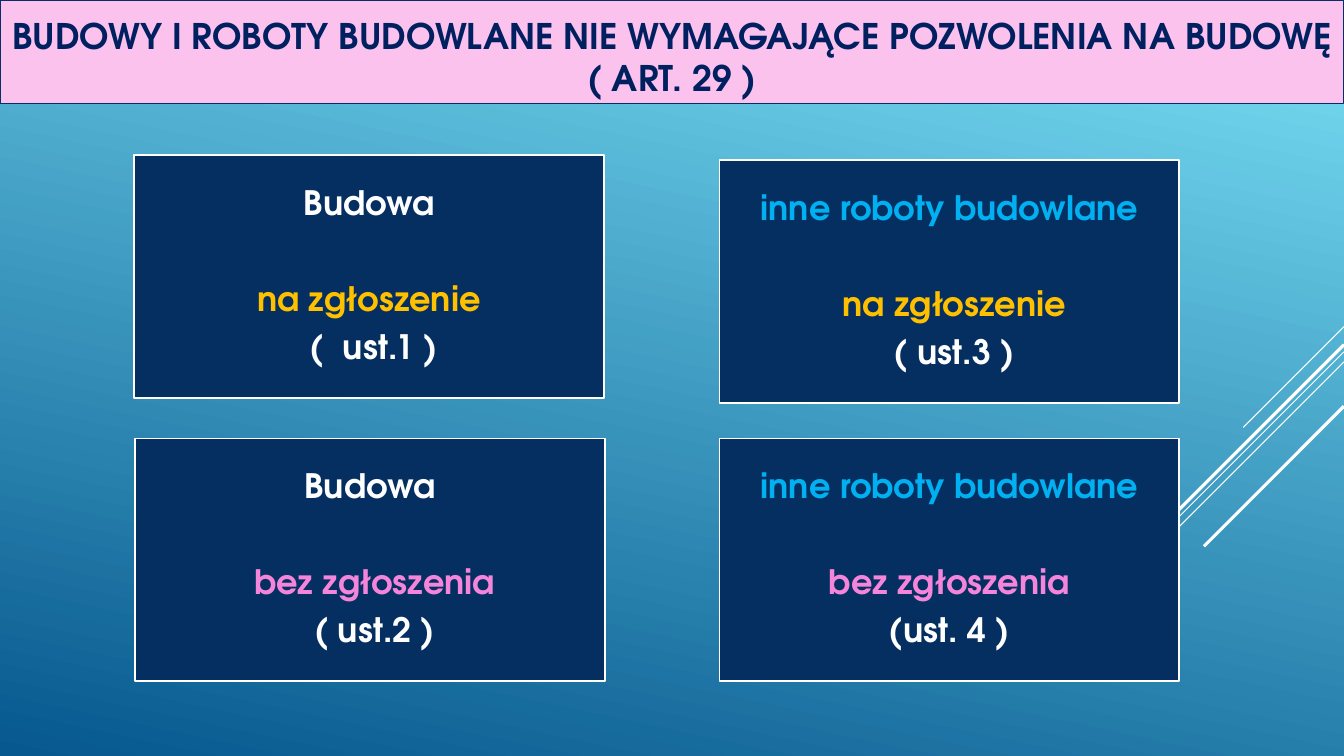
from dataclasses import dataclass

from lxml import etree
from pptx import Presentation
from pptx.dml.color import RGBColor
from pptx.enum.shapes import MSO_CONNECTOR, MSO_SHAPE
from pptx.enum.text import MSO_ANCHOR, PP_ALIGN
from pptx.oxml.ns import qn
from pptx.util import Pt

RECT = MSO_SHAPE.RECTANGLE
LINE = MSO_CONNECTOR.STRAIGHT
MIDDLE, BOTTOM = MSO_ANCHOR.MIDDLE, MSO_ANCHOR.BOTTOM
CENTER = PP_ALIGN.CENTER


@dataclass(frozen=True)
class Theme:
    font: str = "TeX Gyre Adventor"
    head: float = 25.2
    body: float = 24
    navy: str = "052F61"
    ink: str = "002060"
    rose: str = "FAC2ED"
    white: str = "FFFFFF"
    blue: str = "00B0F0"
    gold: str = "FFC000"
    pink: str = "F585DB"
    light: str = "6ED2EB"
    deep: str = "06588E"


THEME = Theme()
WIDTH, HEIGHT = 960, 540
GAP = 8.4    # space after each line of a card
SKIP = 34.3  # extra room below the heading of a card


def rgb(code):
    return RGBColor.from_string(code)


def paint(slide):
    """Gradient background."""
    fill = slide.background.fill
    fill.gradient()
    fill.gradient_angle = 258
    stops = ((0.1, THEME.light), (1, THEME.deep))
    for stop, (place, code) in zip(fill.gradient_stops, stops):
        stop.position = place
        stop.color.rgb = rgb(code)


def add_ray(slide, x, y, run, weight):
    """Diagonal line that falls to the left from (x, y)."""
    ray = slide.shapes.add_connector(
        LINE, Pt(x), Pt(y), Pt(x - run), Pt(y + run))
    ray.line.color.rgb = rgb(THEME.white)
    ray.line.width = Pt(weight)
    etree.SubElement(ray._element.spPr, qn("a:effectLst"))


def add_box(slide, x, y, wide, high, fill, edge, weight, anchor, inset):
    """Filled rectangle; returns its text frame."""
    box = slide.shapes.add_shape(RECT, Pt(x), Pt(y), Pt(wide), Pt(high))
    box.shadow.inherit = False
    box.fill.solid()
    box.fill.fore_color.rgb = rgb(fill)
    box.line.color.rgb = rgb(edge)
    box.line.width = Pt(weight)
    frame = box.text_frame
    frame.word_wrap = True
    frame.vertical_anchor = anchor
    frame.margin_left = frame.margin_right = Pt(inset)
    return frame


def add_run(para, text, size, code):
    run = para.add_run()
    run.text = text
    run.font.name = THEME.font
    run.font.size = Pt(size)
    run.font.bold = True
    run.font.color.rgb = rgb(code)


def add_title(slide, lines):
    frame = add_box(slide, 0, 0, WIDTH, 74, THEME.rose, THEME.navy,
                    0.75, BOTTOM, 0)
    para = frame.paragraphs[0]
    para.alignment = CENTER
    for i, text in enumerate(lines):
        if i:
            para.add_line_break()
        add_run(para, text, THEME.head, THEME.ink)


def add_card(slide, x, y, wide, lines):
    """Card with a heading, a mode and a section number."""
    frame = add_box(slide, x, y, wide, 173.5, THEME.navy, THEME.white,
                    1.25, MIDDLE, 7.2)
    frame.margin_top = frame.margin_bottom = Pt(7.2)
    for i, (text, code) in enumerate(lines):
        para = frame.add_paragraph() if i else frame.paragraphs[0]
        para.alignment = CENTER
        para.line_spacing = 0.9
        para.space_before = Pt(SKIP if i == 1 else 0)
        para.space_after = Pt(GAP)
        add_run(para, text, THEME.body, code)


def main():
    deck = Presentation()
    deck.slide_width, deck.slide_height = Pt(WIDTH), Pt(HEIGHT)
    slide = deck.slides.add_slide(deck.slide_layouts[6])
    paint(slide)

    # Rays at the right edge: start height, run, weight
    rays = ((233.3, 72, 0.75), (251.3, 234.7, 0.75), (258.5, 149, 0.75),
            (246.2, 137.5, 2.25), (290.2, 100, 2.25))
    for y, run, weight in rays:
        add_ray(slide, WIDTH, y, run, weight)

    add_title(slide, ("BUDOWY I ROBOTY BUDOWLANE NIE WYMAGAJĄCE "
                      "POZWOLENIA NA BUDOWĘ", "( ART. 29 )"))

    # Cards: building on the left, other works on the right
    build = ("Budowa", THEME.white)
    works = ("inne roboty budowlane", THEME.blue)
    notice, free = THEME.gold, THEME.pink
    cards = (
        (95.8, 110.9, 335.5, build, "na zgłoszenie", notice, " (  ust.1 )"),
        (96.5, 313.2, 335.5, build, " bez zgłoszenia", free, " ( ust.2 )"),
        (514, 114.5, 328.3, works, " na zgłoszenie", notice, " ( ust.3 )"),
        (514, 313.2, 328.3, works, "bez zgłoszenia", free, "(ust. 4 )"),
    )
    for x, y, wide, head, mode, code, part in cards:
        add_card(slide, x, y, wide,
                 (head, (mode, code), (part, THEME.white)))

    deck.save("out.pptx")


if __name__ == "__main__":
    main()
